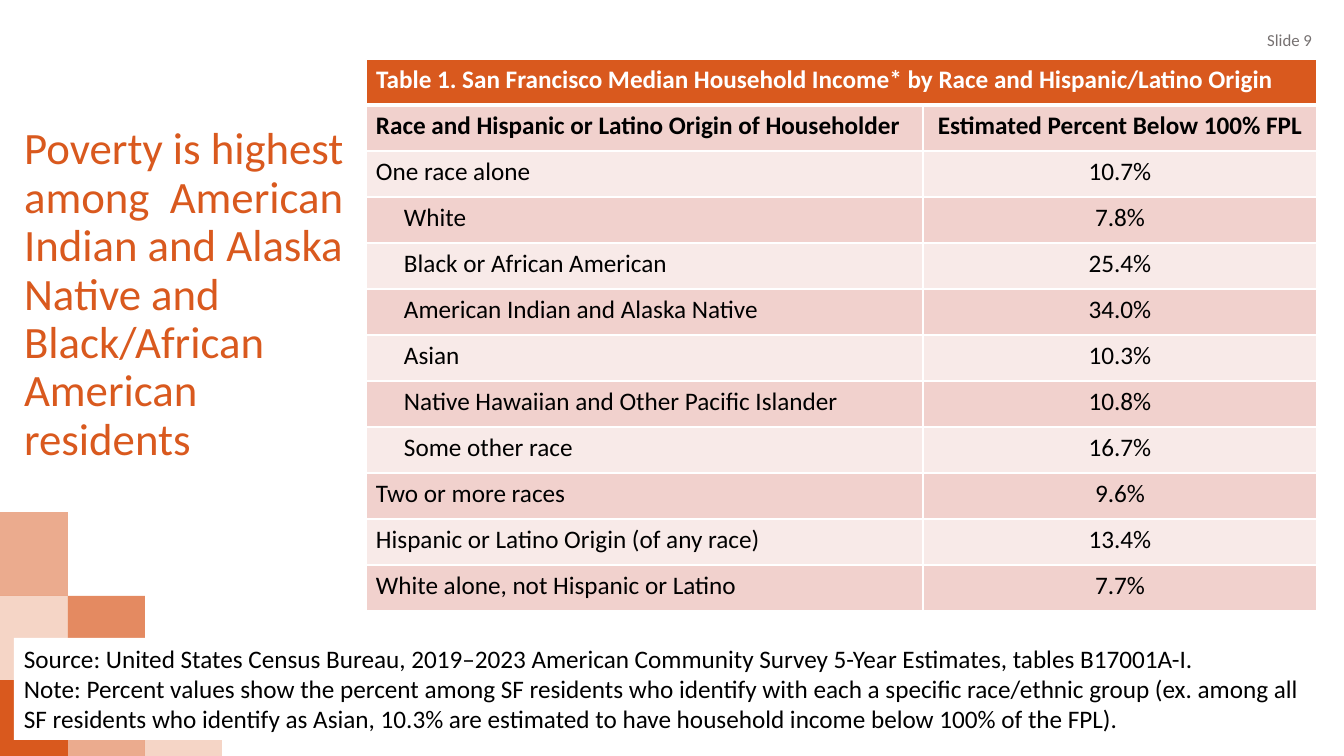
import dataclasses

import lxml.etree
import pptx
import pptx.dml.color
import pptx.enum.shapes
import pptx.enum.text
import pptx.oxml.ns
import pptx.util

ALIGN = pptx.enum.text.PP_ALIGN
ANCHOR = pptx.enum.text.MSO_ANCHOR
SLIDE_W, SLIDE_H = 1344, 756


def px(n):
    return pptx.util.Emu(round(n * 12192000 / SLIDE_W))


def rgb(value):
    return pptx.dml.color.RGBColor.from_string(value)


@dataclasses.dataclass(frozen=True)
class Theme:
    font: str = "Calibri"
    accent: str = "D9591E"
    white: str = "FFFFFF"
    black: str = "000000"
    grey: str = "767171"
    band_dark: str = "F1D1CD"
    band_light: str = "F8EAE8"
    title_size: int = 32
    body_size: int = 18
    small_size: int = 12


class SlideBuilder:
    def __init__(self, prs, theme):
        self.theme = theme
        self.s = prs.slides.add_slide(prs.slide_layouts[5])

    def set_text(self, tf, text, size, color, bold=False, align=ALIGN.LEFT):
        tf.word_wrap = True
        tf.text = text
        for p in tf.paragraphs:
            p.alignment = align
            for r in p.runs:
                r.font.name = self.theme.font
                r.font.size = pptx.util.Pt(size)
                r.font.bold = bold
                r.font.color.rgb = rgb(color)

    def title(self, x, y, w, h, text):
        sp = self.s.shapes.title
        sp.left, sp.top, sp.width, sp.height = px(x), px(y), px(w), px(h)
        tf = sp.text_frame
        self.set_text(tf, text, self.theme.title_size, self.theme.accent)
        tf.auto_size = pptx.enum.text.MSO_AUTO_SIZE.NONE
        tf.vertical_anchor = ANCHOR.TOP
        tf.paragraphs[0].line_spacing = 0.9

    def text(self, x, y, w, h, text, size, color, align):
        sp = self.s.shapes.add_textbox(px(x), px(y), px(w), px(h))
        self.set_text(sp.text_frame, text, size, color, align=align)
        sp.text_frame.vertical_anchor = ANCHOR.MIDDLE

    def rect(self, x, y, w, h, color, opacity=100):
        sp = self.s.shapes.add_shape(
            pptx.enum.shapes.MSO_SHAPE.RECTANGLE, px(x), px(y), px(w), px(h))
        sp.shadow.inherit = False
        sp.line.fill.background()
        sp.fill.solid()
        sp.fill.fore_color.rgb = rgb(color)
        if opacity < 100:
            clr = sp._element.spPr.find(".//" + pptx.oxml.ns.qn("a:srgbClr"))
            lxml.etree.SubElement(
                clr, pptx.oxml.ns.qn("a:alpha"), val=str(opacity * 1000))
        return sp

    def note(self, x, y, w, h, text):
        tf = self.rect(x, y, w, h, self.theme.white).text_frame
        self.set_text(tf, text, self.theme.body_size, self.theme.black)
        tf.vertical_anchor = ANCHOR.TOP

    def borders(self, cell, bottom):
        qn = pptx.oxml.ns.qn
        tc_pr = cell._tc.get_or_add_tcPr()
        for side, width in (("L", 1), ("R", 1), ("T", 1), ("B", bottom)):
            ln = lxml.etree.SubElement(
                tc_pr, qn("a:ln" + side), w=str(int(pptx.util.Pt(width))))
            fill = lxml.etree.SubElement(ln, qn("a:solidFill"))
            lxml.etree.SubElement(fill, qn("a:srgbClr"), val=self.theme.white)

    def cell(self, cell, text, fill, color, bold, align, bottom=1):
        self.borders(cell, bottom)
        cell.fill.solid()
        cell.fill.fore_color.rgb = rgb(fill)
        self.set_text(cell.text_frame, text, self.theme.body_size, color, bold, align)

    def table(self, x, y, widths, row_h, caption, headings, rows):
        t = self.theme
        count = len(rows) + 2
        table = self.s.shapes.add_table(
            count, len(widths), px(x), px(y),
            px(sum(widths)), px(row_h * count)).table
        for column, width in zip(table.columns, widths):
            column.width = px(width)
        for row in table.rows:
            row.height = px(row_h)
        table.cell(0, 0).merge(table.cell(0, 1))
        for col, text in enumerate((caption, "")):
            self.cell(table.cell(0, col), text, t.accent, t.white, True, ALIGN.LEFT, 3)
        for i, (label, value, indent) in enumerate([(*headings, 0), *rows], 1):
            fill = t.band_dark if i % 2 else t.band_light
            for col, text in enumerate((label, value)):
                align = ALIGN.CENTER if col else ALIGN.LEFT
                self.cell(table.cell(i, col), text, fill, t.black, i == 1, align)
            table.cell(i, 0).margin_left = px(10 + 28 * indent)


INCOME_ROWS = [
    ("One race alone", "10.7%", 0),
    ("White", "7.8%", 1),
    ("Black or African American", "25.4%", 1),
    ("American Indian and Alaska Native", "34.0%", 1),
    ("Asian", "10.3%", 1),
    ("Native Hawaiian and Other Pacific Islander", "10.8%", 1),
    ("Some other race", "16.7%", 1),
    ("Two or more races", "9.6%", 0),
    ("Hispanic or Latino Origin (of any race)", "13.4%", 0),
    ("White alone, not Hispanic or Latino", "7.7%", 0),
]
CORNER_TILES = [(0, 0, 100), (1, 0, 50), (0, 1, 25), (1, 1, 70), (2, 0, 25), (0, 2, 50)]


def main():
    prs = pptx.Presentation()
    prs.slide_width, prs.slide_height = px(SLIDE_W), px(SLIDE_H)
    theme = Theme()
    b = SlideBuilder(prs, theme)
    tile_w, tile_h = 77, 84
    for col, row, opacity in CORNER_TILES:
        b.rect(-9 + col * tile_w, 680 - row * tile_h, tile_w, tile_h,
               theme.accent, opacity)
    b.text(1020, 20, 302, 40, "Slide 9", theme.small_size, theme.grey, ALIGN.RIGHT)
    b.title(14, 121, 341, 352,
            "Poverty is highest among  American Indian and Alaska Native "
            "and Black/African American residents")
    b.table(366, 59, (557, 394), 46,
            "Table 1. San Francisco Median Household Income* by Race and "
            "Hispanic/Latino Origin",
            ("Race and Hispanic or Latino Origin of Householder",
             "Estimated Percent Below 100% FPL"), INCOME_ROWS)
    b.note(14, 638, 1313, 102,
           "Source: United States Census Bureau, 2019–2023 American Community "
           "Survey 5-Year Estimates, tables B17001A-I.\n"
           "Note: Percent values show the percent among SF residents who identify "
           "with each a specific race/ethnic group (ex. among all SF residents who "
           "identify as Asian, 10.3% are estimated to have household income below "
           "100% of the FPL).")
    prs.save("out.pptx")


if __name__ == "__main__":
    main()
